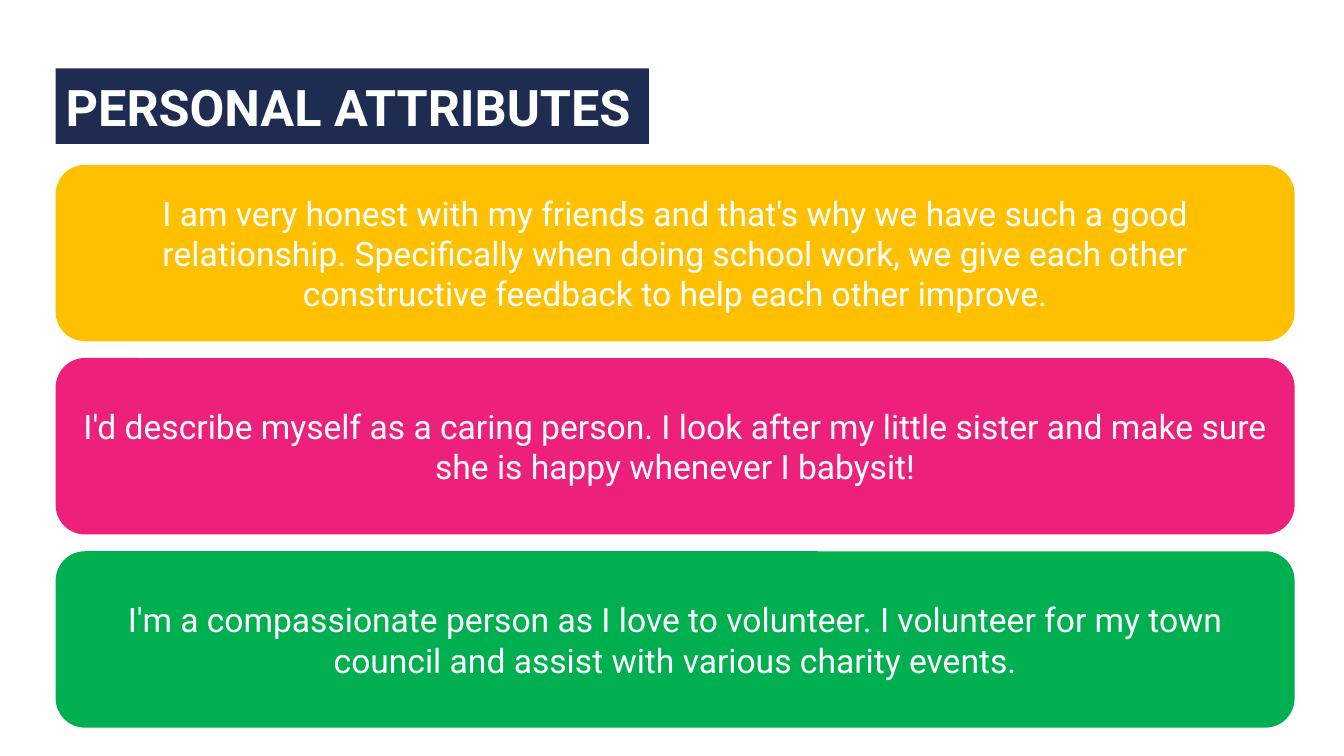
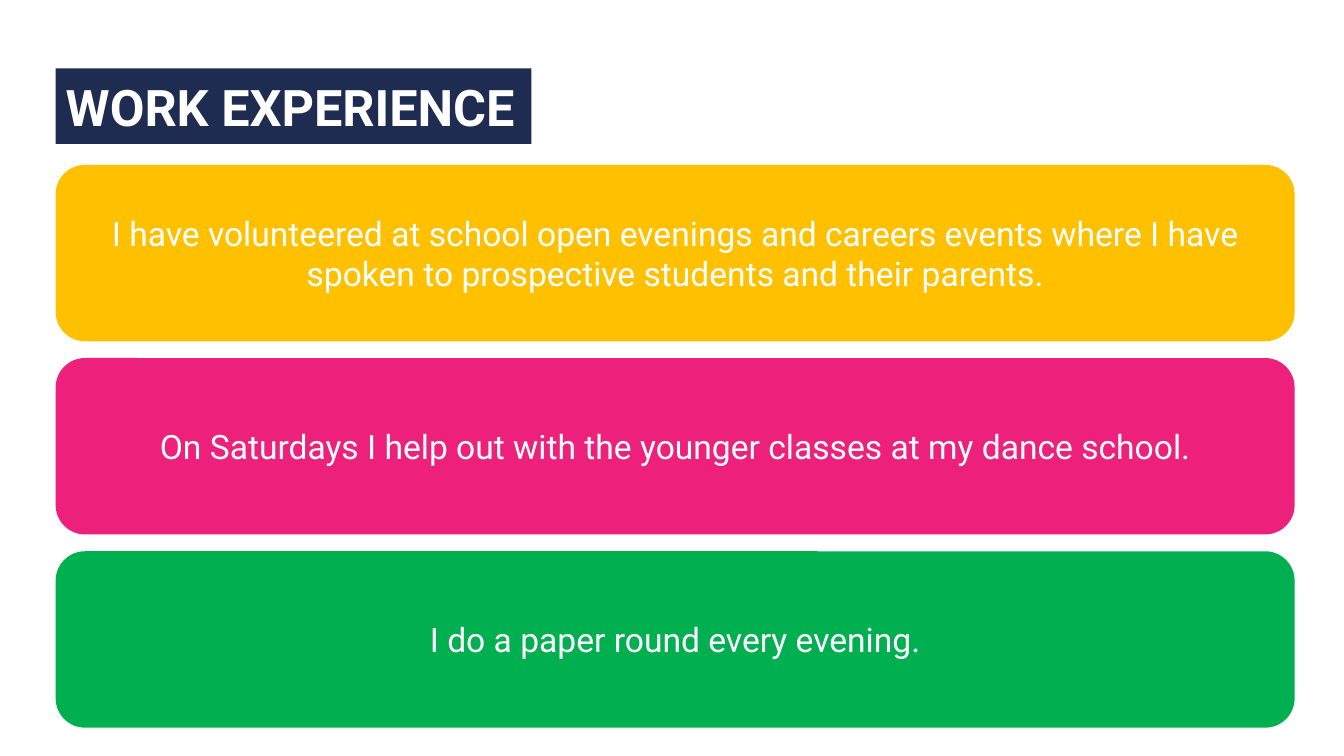
from dataclasses import dataclass

from pptx import Presentation
from pptx import util as u
from pptx.dml.color import RGBColor
from pptx.enum import shapes, text

PX = 9525  # EMU in one px, 96 px to the inch
SLIDE_SIZE = (1280, 720)
TITLE_ONLY = 5


@dataclass(frozen=True)
class Theme:
    font: str = "Roboto"
    title_size: int = 36
    body_size: int = 24
    paper: str = "FFFFFF"
    ink: str = "FFFFFF"
    title_band: str = "1E2C52"
    cards: tuple = ("FFC000", "ED217C", "00B050")


@dataclass(frozen=True)
class Box:
    left: int
    top: int
    width: int
    height: int

    def emu(self):
        return [u.Emu(n * PX) for n in (self.left, self.top, self.width, self.height)]


THEME = Theme()
TITLE_LEFT, TITLE_TOP, TITLE_HEIGHT = 53, 65, 72
CARD_AREA = Box(53, 157, 1180, 536)
CARD_GAP = 16

SLIDES = [
    ("PERSONAL ATTRIBUTES", 565, [
        "I am very honest with my friends and that's why we have such a good "
        "relationship. Specifically when doing school work, we give each other "
        "constructive feedback to help each other improve.",
        "I'd describe myself as a caring person. I look after my little sister "
        "and make sure she is happy whenever I babysit!",
        "I'm a compassionate person as I love to volunteer. I volunteer for my "
        "town council and assist with various charity events.",
    ]),
    ("WORK EXPERIENCE", 453, [
        "I have volunteered at school open evenings and careers events where I "
        "have spoken to prospective students and their parents.",
        "On Saturdays I help out with the younger classes at my dance school.",
        "I do a paper round every evening.",
    ]),
]


def paint(fill, colour):
    fill.solid()
    fill.fore_color.rgb = RGBColor.from_string(colour)


def write(shape, wording, size, align, bold=False):
    """Fill a shape with one vertically centred paragraph in the theme font."""
    frame = shape.text_frame
    frame.text = wording
    frame.word_wrap = True
    frame.auto_size = text.MSO_AUTO_SIZE.NONE
    frame.vertical_anchor = text.MSO_ANCHOR.MIDDLE
    paragraph = frame.paragraphs[0]
    paragraph.alignment = align
    for run in paragraph.runs:
        run.font.name = THEME.font
        run.font.size = u.Pt(size)
        run.font.bold = bold
        run.font.color.rgb = RGBColor.from_string(THEME.ink)


def place_title(slide, box, wording):
    title = slide.shapes.title
    title.left, title.top, title.width, title.height = box.emu()
    paint(title.fill, THEME.title_band)
    write(title, wording, THEME.title_size, text.PP_ALIGN.LEFT, bold=True)


def add_card(slide, box, wording, colour):
    card = slide.shapes.add_shape(shapes.MSO_SHAPE.ROUNDED_RECTANGLE, *box.emu())
    card.shadow.inherit = False
    paint(card.fill, colour)
    card.line.fill.background()
    write(card, wording, THEME.body_size, text.PP_ALIGN.CENTER)


def add_card_stack(slide, area, statements):
    """Share the height of the area equally between the statements."""
    height = (area.height - CARD_GAP * (len(statements) - 1)) // len(statements)
    for row, (statement, colour) in enumerate(zip(statements, THEME.cards)):
        top = area.top + row * (height + CARD_GAP)
        add_card(slide, Box(area.left, top, area.width, height), statement, colour)


def add_statement_slide(deck, heading, title_width, statements):
    slide = deck.slides.add_slide(deck.slide_layouts[TITLE_ONLY])
    paint(slide.background.fill, THEME.paper)
    place_title(slide, Box(TITLE_LEFT, TITLE_TOP, title_width, TITLE_HEIGHT), heading)
    add_card_stack(slide, CARD_AREA, statements)


def main():
    deck = Presentation()
    deck.slide_width, deck.slide_height = (u.Emu(n * PX) for n in SLIDE_SIZE)
    for heading, title_width, statements in SLIDES:
        add_statement_slide(deck, heading, title_width, statements)
    deck.save("out.pptx")


if __name__ == "__main__":
    main()
